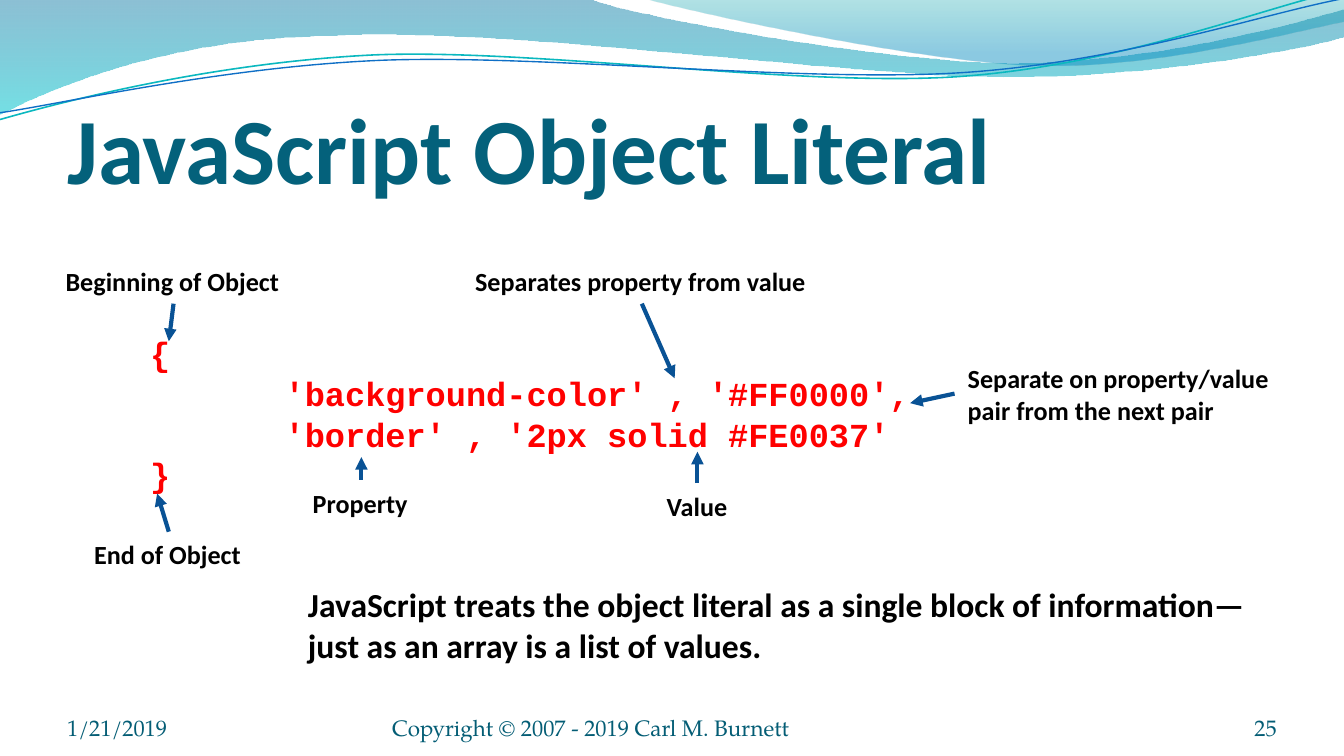
import math
from dataclasses import dataclass

import lxml.etree
import pptx
import pptx.dml.color
import pptx.enum.shapes
import pptx.enum.text
import pptx.oxml
import pptx.oxml.ns
import pptx.util

Cm, Pt = pptx.util.Cm, pptx.util.Pt
qn = pptx.oxml.ns.qn
Anchor = pptx.enum.text.MSO_ANCHOR
Align = pptx.enum.text.PP_ALIGN
Point = tuple[float, float]
Box = tuple[float, float, float, float]  # left, top, width, height in cm


@dataclass(frozen=True)
class TextStyle:
    font: str
    size: float
    color: str
    bold: bool = True


@dataclass(frozen=True)
class Theme:
    title: TextStyle = TextStyle("Calibri", 50, "04617B")
    code: TextStyle = TextStyle("Courier New", 18, "FF0000")
    label: TextStyle = TextStyle("Calibri", 14, "000000")
    remark: TextStyle = TextStyle("Calibri", 18, "000000")
    footer: TextStyle = TextStyle("TeX Gyre Pagella", 12, "045D75", False)
    arrow: str = "095295"
    arrow_width: float = 2.25


@dataclass(frozen=True)
class Stop:
    position: int  # percent
    color: str
    opacity: int  # percent


@dataclass(frozen=True)
class Wave:
    """A path whose segments hold one point (line) or three (Bezier curve)."""
    start: Point
    segments: list[tuple[Point, ...]]
    stops: tuple[Stop, ...] = ()
    line: str = ""
    width: float = 0
    tilt: float = 0  # degrees


@dataclass(frozen=True)
class Callout:
    text: str
    box: Box
    tail: Point
    tip: Point
    wrap: bool = False


THEME = Theme()
WAVE_CENTRE = (12.68, 1.1)
WAVES = [
    Wave((0, 0), [
        ((11.18, -0.01),),
        ((12.09, 0.33), (16.87, 1.19), (19.25, 1.19)),
        ((21.67, 1.19), (24.33, 0.48), (25.4, 0.18)),
        ((25.43, 0.69),),
        ((24.97, 0.84), (22.1, 1.45), (18.95, 1.45)),
        ((15.8, 1.42), (9.7, 0.53), (6.53, 0.66)),
        ((3.28, 0.69), (1.17, 1.57), (-0.03, 2.16)),
        ((0, 0),),
    ], stops=(Stop(0, "0074A1", 45), Stop(100, "00C6CF", 55))),
    Wave((12.17, -0.03), [
        ((12.93, 0.2), (17.32, 1.17), (19.53, 1.24)),
        ((21.74, 1.32), (24.41, 0.61), (25.4, 0.41)),
        ((25.4, 0),),
        ((12.17, -0.03),),
    ], stops=(Stop(0, "00A1A9", 30), Stop(80, "008BBF", 45))),
    Wave((0, 2.26), [
        ((1.22, 1.91), (4.01, 1.19), (7.04, 1.04)),
        ((10.06, 0.91), (15.04, 1.65), (18.08, 1.45)),
        ((21.16, 1.24), (23.85, 0.15), (25.35, -0.18)),
    ], line="0AB8BF", width=0.85, tilt=-2.7),
    Wave((0, 2.13), [
        ((1.19, 1.96), (4.17, 1.27), (7.19, 1.14)),
        ((10.24, 1.02), (15.16, 1.57), (18.21, 1.37)),
        ((21.23, 1.17), (23.9, 0.25), (25.4, -0.03)),
    ], line="0F6FC6", width=0.75, tilt=-2.7),
]
CALLOUTS = [
    Callout("Beginning of Object", (0.99, 4.89, 4.57, 0.86), (3.28, 5.74), (3.19, 6.45)),
    Callout("Separates property from value", (8.73, 4.89, 6.81, 0.86),
            (12.13, 5.74), (12.75, 7.15)),
    Callout("Separate on property/value pair from the next pair",
            (18.04, 6.73, 6.22, 1.45), (18.04, 7.44), (17.2, 7.62), wrap=True),
    Callout("Property", (5.66, 9.08, 2.31, 0.86), (6.83, 9.07), (6.83, 8.64)),
    Callout("Value", (12.35, 9.14, 1.68, 0.86), (13.18, 9.13), (13.18, 8.54)),
    Callout("End of Object", (1.53, 10.06, 3.3, 0.86), (3.19, 10.05), (2.97, 9.33)),
]
CODE = [
    "{",
    "\t'background-color' , '#FF0000',",
    "\t'border' , '2px solid #FE0037'",
    "}",
]
CODE_TAB = 2.54
REMARK = ("JavaScript treats the object literal as a single block of information—"
          "just as an array is a list of values.")
FOOTER = [
    ("1/21/2019", 1.27, 5.92, Align.LEFT),
    ("Copyright © 2007 - 2019 Carl M. Burnett", 7.41, 9.32, Align.LEFT),
    ("25", 22.02, 2.11, Align.RIGHT),
]


def rgb(color: str) -> pptx.dml.color.RGBColor:
    return pptx.dml.color.RGBColor.from_string(color)


def lengths(values: tuple[float, ...]) -> list[pptx.util.Length]:
    return [Cm(value) for value in values]


def untilt(point: Point, tilt: float) -> list[pptx.util.Length]:
    """Turn a point back about the wave centre, so the shape can carry the tilt."""
    angle = math.radians(-tilt)
    x, y = (value - centre for value, centre in zip(point, WAVE_CENTRE))
    return lengths((WAVE_CENTRE[0] + x * math.cos(angle) - y * math.sin(angle),
                    WAVE_CENTRE[1] + x * math.sin(angle) + y * math.cos(angle)))


def bend(shape, segments: list[list[list[pptx.util.Length]]]) -> None:
    """Turn the straight pieces of three-point segments into Bezier curves."""
    pieces = list(shape._element.iter(qn("a:lnTo")))
    for piece, segment in zip(pieces, segments):
        if len(segment) == 3:
            curve = lxml.etree.Element(qn("a:cubicBezTo"))
            for x, y in segment:
                lxml.etree.SubElement(curve, qn("a:pt"), x=str(x - shape.left),
                                      y=str(y - shape.top))
            piece.getparent().replace(piece, curve)


def fill_downwards(shape, stops: tuple[Stop, ...]) -> None:
    """Fill with a translucent gradient running from top to bottom."""
    stop_xml = "".join(
        f'<a:gs pos="{s.position * 1000}"><a:srgbClr val="{s.color}">'
        f'<a:alpha val="{s.opacity * 1000}"/></a:srgbClr></a:gs>' for s in stops)
    gradient = pptx.oxml.parse_xml(
        f'<a:gradFill {pptx.oxml.ns.nsdecls("a")}><a:gsLst>{stop_xml}</a:gsLst>'
        '<a:lin ang="5400000" scaled="0"/></a:gradFill>')
    shape._element.spPr.find(qn("a:custGeom")).addnext(gradient)


def draw_wave(slide, wave: Wave) -> None:
    segments = [[untilt(point, wave.tilt) for point in segment]
                for segment in wave.segments]
    builder = slide.shapes.build_freeform(*untilt(wave.start, wave.tilt))
    builder.add_line_segments([segment[-1] for segment in segments],
                              close=bool(wave.stops))
    shape = builder.convert_to_shape()
    bend(shape, segments)
    shape.rotation = wave.tilt
    shape.shadow.inherit = False
    if wave.stops:
        shape.line.fill.background()
        fill_downwards(shape, wave.stops)
    else:
        shape.fill.background()
        shape.line.color.rgb = rgb(wave.line)
        shape.line.width = Pt(wave.width)


def write(frame, lines: list[str], style: TextStyle, align=Align.LEFT) -> None:
    for index, line in enumerate(lines):
        paragraph = frame.add_paragraph() if index else frame.paragraphs[0]
        paragraph.alignment = align
        if line.startswith("\t"):
            tabs = lxml.etree.SubElement(paragraph._p.get_or_add_pPr(), qn("a:tabLst"))
            lxml.etree.SubElement(tabs, qn("a:tab"), pos=str(Cm(CODE_TAB)), algn="l")
        run = paragraph.add_run()
        run.text = line
        run.font.name, run.font.size = style.font, Pt(style.size)
        run.font.bold, run.font.color.rgb = style.bold, rgb(style.color)


def set_insets(frame, top: float = 0) -> None:
    frame.margin_left = frame.margin_right = frame.margin_bottom = 0
    frame.margin_top = Cm(top)


def add_text(slide, box: Box, lines: list[str], style: TextStyle,
             wrap: bool = True, align=Align.LEFT):
    frame = slide.shapes.add_textbox(*lengths(box)).text_frame
    frame.word_wrap = wrap
    write(frame, lines, style, align)
    return frame


def draw_callout(slide, callout: Callout) -> None:
    add_text(slide, callout.box, [callout.text], THEME.label, callout.wrap)
    arrow = slide.shapes.add_connector(pptx.enum.shapes.MSO_CONNECTOR.STRAIGHT,
                                       *lengths(callout.tail + callout.tip))
    arrow.line.color.rgb = rgb(THEME.arrow)
    arrow.line.width = Pt(THEME.arrow_width)
    lxml.etree.SubElement(arrow.line._get_or_add_ln(), qn("a:tailEnd"), type="triangle")
    lxml.etree.SubElement(arrow._element.spPr, qn("a:effectLst"))


def main() -> None:
    deck = pptx.Presentation()
    deck.slide_width, deck.slide_height = Cm(25.4), Cm(14.29)
    slide = deck.slides.add_slide(deck.slide_layouts[5])
    for wave in WAVES:
        draw_wave(slide, wave)

    title = slide.shapes.title
    title.left, title.top, title.width, title.height = lengths((1.27, 1.46, 23.06, 2.39))
    title.text_frame.vertical_anchor = Anchor.BOTTOM
    set_insets(title.text_frame, top=0.13)
    write(title.text_frame, ["JavaScript Object Literal"], THEME.title)

    add_text(slide, (2.59, 6.17, 14.96, 3.33), CODE, THEME.code, wrap=False)
    for callout in CALLOUTS:
        draw_callout(slide, callout)
    add_text(slide, (5.57, 10.92, 18.26, 1.8), [REMARK], THEME.remark)
    for text, left, width, align in FOOTER:
        frame = add_text(slide, (left, 13.24, width, 0.76), [text], THEME.footer, align=align)
        frame.vertical_anchor = Anchor.BOTTOM
        set_insets(frame)
    deck.save("out.pptx")


if __name__ == "__main__":
    main()
